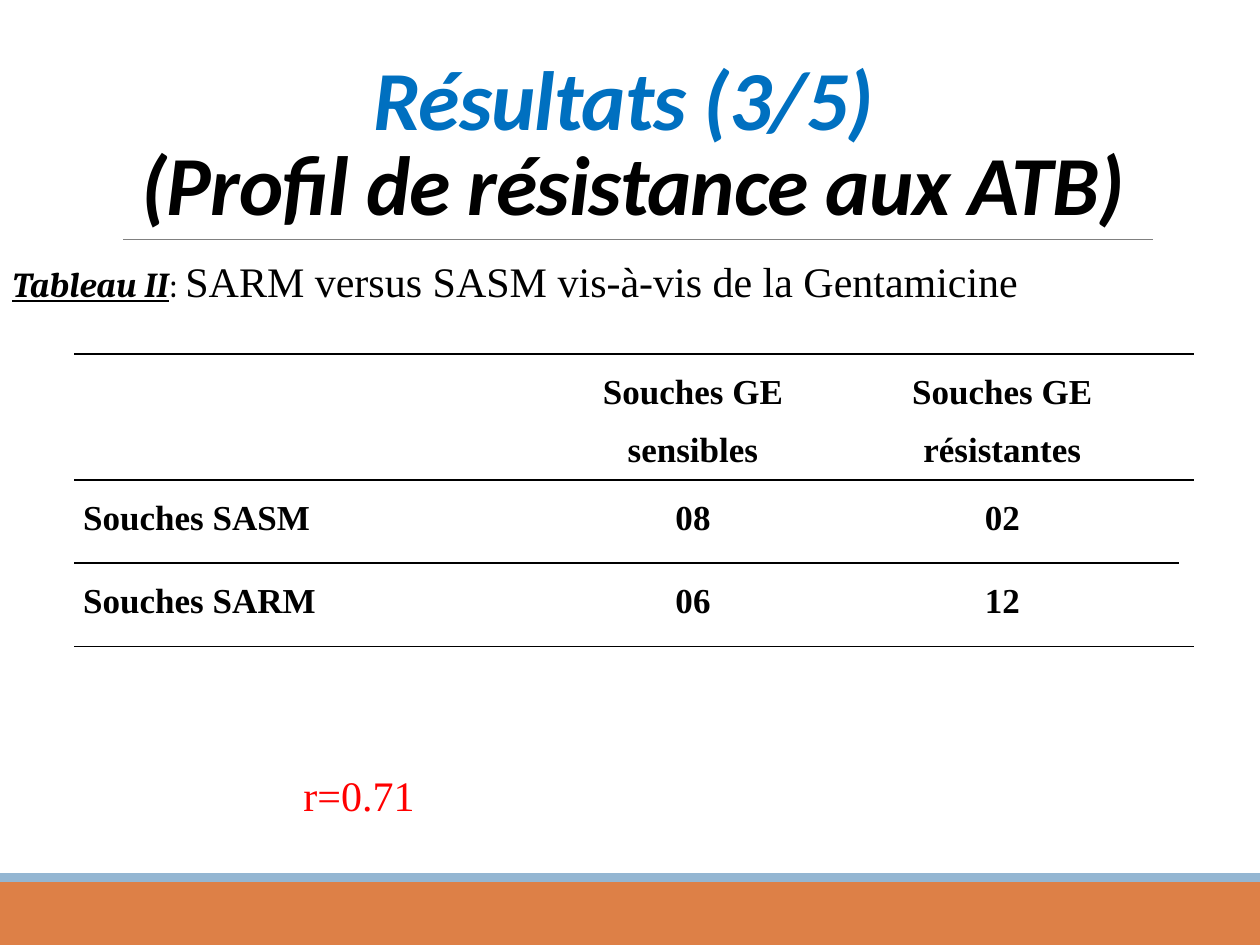
from lxml import etree
from pptx import Presentation
from pptx.dml.color import RGBColor
from pptx.enum.shapes import MSO_CONNECTOR, MSO_SHAPE
from pptx.enum.text import MSO_ANCHOR, MSO_AUTO_SIZE, PP_ALIGN
from pptx.oxml.ns import qn
from pptx.util import Inches, Pt

RECT = MSO_SHAPE.RECTANGLE
LINE = MSO_CONNECTOR.STRAIGHT
CENTER, JUSTIFY = PP_ALIGN.CENTER, PP_ALIGN.JUSTIFY
BOTTOM, FIXED = MSO_ANCHOR.BOTTOM, MSO_AUTO_SIZE.NONE

BLACK = "000000"
HEAD = {"name": "Calibri", "size": Pt(48), "bold": True, "italic": True}
LABEL = {"name": "Cambria", "size": Pt(20), "bold": True, "italic": True,
         "underline": True}
COLON = {"name": "Cambria", "size": Pt(20)}
BODY = {"name": "Times New Roman", "size": Pt(24)}
CELL = {"name": "Times New Roman", "size": Pt(20), "bold": True}

ROWS = [
    ["", "Souches GE sensibles", "Souches GE résistantes", ""],
    ["Souches SASM", "08", "02", ""],
    ["Souches SARM", "06", "12", ""],
]
WIDTHS = [3.86, 2.1, 2.81, 0.12]
HEIGHTS = [1, 0.66, 0.66]


def rgb(code):
    return RGBColor.from_string(code)


def box(*nums):
    return [Inches(n) for n in nums]


def apply(item, style):
    for key, val in style.items():
        setattr(item, key, val)


def border(cell, sides):
    """Draw a 1 pt line on the named sides and clear the others."""
    props = cell._tc.get_or_add_tcPr()
    for side in "LRTB":
        edge = etree.SubElement(props, qn("a:ln" + side), w=str(Pt(1)))
        if side in sides:
            fill = etree.SubElement(edge, qn("a:solidFill"))
            etree.SubElement(fill, qn("a:srgbClr"), val=BLACK)
        else:
            etree.SubElement(edge, qn("a:noFill"))


class Page:
    def __init__(self, deck):
        self.slide = deck.slides.add_slide(deck.slide_layouts[5])
        self.shapes = self.slide.shapes

    def run(self, para, text, style, color=BLACK):
        run = para.add_run()
        run.text = text
        apply(run.font, style)
        run.font.color.rgb = rgb(color)
        return run

    def band(self, top, high, color):
        shape = self.shapes.add_shape(RECT, *box(0, top, 10, high))
        shape.shadow.inherit = False
        shape.fill.solid()
        shape.fill.fore_color.rgb = rgb(color)
        shape.line.fill.background()

    def rule(self, left, right, top):
        line = self.shapes.add_connector(LINE, *box(left, top, right, top))
        line.line.color.rgb = rgb("808080")
        line.line.width = Pt(0.5)
        etree.SubElement(line._element.spPr, qn("a:effectLst"))

    def title(self, place, lines):
        shape = self.shapes.title
        apply(shape, dict(zip(("left", "top", "width", "height"), box(*place))))
        frame = shape.text_frame
        apply(frame, {"word_wrap": True, "auto_size": FIXED,
                      "vertical_anchor": BOTTOM})
        para = frame.paragraphs[0]
        apply(para, {"alignment": CENTER, "line_spacing": 0.85})
        for i, (text, color) in enumerate(lines):
            if i:
                para.add_line_break()
            run = self.run(para, text, HEAD, color)
            run.font._element.set("spc", "-50")

    def text(self, place, runs):
        frame = self.shapes.add_textbox(*box(*place)).text_frame
        frame.word_wrap = True
        for part in runs:
            self.run(frame.paragraphs[0], *part)

    def cell(self, cell, text, align, sides):
        side = Inches(0.07) if text else 0
        apply(cell, {"margin_left": side, "margin_right": side,
                     "margin_top": 0, "margin_bottom": 0})
        border(cell, sides)
        cell.fill.background()
        para = cell.text_frame.paragraphs[0]
        apply(para, {"alignment": align, "line_spacing": 1.5})
        if text:
            self.run(para, text, CELL)

    def table(self, left, top):
        size = box(left, top, sum(WIDTHS), sum(HEIGHTS))
        table = self.shapes.add_table(len(ROWS), len(WIDTHS), *size).table
        apply(table, {"first_row": False, "horz_banding": False})
        for col, wide in zip(table.columns, WIDTHS):
            col.width = Inches(wide)
        for row, high in zip(table.rows, HEIGHTS):
            row.height = Inches(high)
        last = len(WIDTHS) - 1
        for r, row in enumerate(ROWS):
            for c, text in enumerate(row):
                # The narrow last column has no line between the data rows.
                sides = "TB" if c < last or r == 0 else "TB"[r - 1]
                self.cell(table.cell(r, c), text, CENTER if c else JUSTIFY,
                          sides)


def main():
    deck = Presentation()
    deck.slide_width, deck.slide_height = box(10, 7.5)
    page = Page(deck)
    page.band(7, 0.5, "DD8047")
    page.band(6.93, 0.07, "94B6D2")
    page.rule(0.98, 9.15, 1.9)
    page.title((0.9, 0.31, 8.25, 1.59),
               [("Résultats (3/5) ", "0070C0"),
                ("(Profil de résistance aux ATB)", BLACK)])
    page.text((0, 1.98, 10, 0.77),
              [("Tableau II", LABEL), (": ", COLON),
               ("SARM versus SASM vis-à-vis de la Gentamicine", BODY)])
    page.table(0.59, 2.81)
    page.text((2.31, 6.06, 2.69, 0.5), [("r=0.71", BODY, "FF0000")])
    deck.save("out.pptx")


if __name__ == "__main__":
    main()
